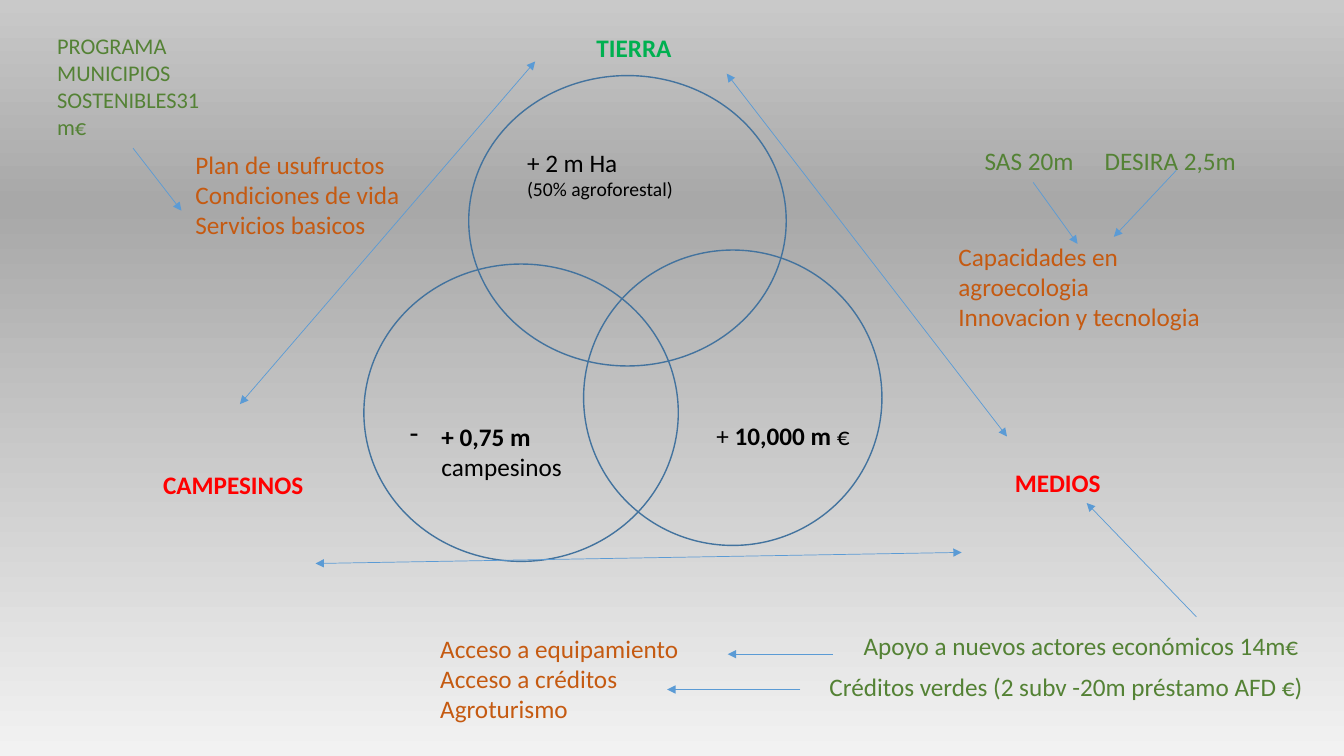
from copy import deepcopy

from pptx import Presentation
from pptx.dml.color import RGBColor
from pptx.enum.shapes import MSO_CONNECTOR as LINE, MSO_SHAPE as SHAPE
from pptx.enum.text import MSO_AUTO_SIZE as FIT
from pptx.oxml.ns import qn
from pptx.util import Pt

BLACK, GREEN, RED = "000000", "00B050", "FF0000"
ORANGE, OLIVE, BLUE, NAVY = "C55A11", "548235", "5B9BD5", "43739E"


def color(code):
    return RGBColor.from_string(code)


def add_text(left, top, width, height, code, lines, bold=None, wrap=True):
    """Add a text box; each line is a paragraph given as (text, bold) spans."""
    box = page.shapes.add_textbox(Pt(left), Pt(top), Pt(width), Pt(height))
    frame = box.text_frame
    frame.word_wrap = wrap
    frame.auto_size = FIT.SHAPE_TO_FIT_TEXT
    for index, spans in enumerate(lines):
        para = frame.add_paragraph() if index else frame.paragraphs[0]
        para.font.name, para.font.size = "Calibri", Pt(18)
        para.font.bold = bold
        para.font.color.rgb = color(code)
        if isinstance(spans, str):
            spans = [(spans, None)]
        for text, span_bold in spans:
            span = para.add_run()
            span.text = text
            span.font.bold = span_bold
    return frame.paragraphs


deck = Presentation()
deck.slide_width, deck.slide_height = Pt(960), Pt(540)
page = deck.slides.add_slide(deck.slide_layouts[6])

# Background: three-stop gradient running upwards
fill = page.background.fill
fill.gradient()
fill.gradient_angle = 90
stop_list = page._element.find(".//" + qn("a:gsLst"))
stop_list.append(deepcopy(stop_list[-1]))
stops = [(0, "F2F2F2"), (0.73, "A8A8A8"), (1, "C9C9C9")]
for stop, (position, code) in zip(fill.gradient_stops, stops):
    stop.position = position
    stop.color.rgb = color(code)

# Three overlapping circles
for left, top, width, height in [
    (334.8, 54, 226.8, 207.4),
    (416.9, 178.6, 213.1, 211),
    (259.9, 188.6, 224.6, 212.4),
]:
    circle = page.shapes.add_shape(
        SHAPE.OVAL, Pt(left), Pt(top), Pt(width), Pt(height))
    circle.shadow.inherit = False
    circle.fill.background()
    circle.line.color.rgb = color(NAVY)
    circle.line.width = Pt(1)

# Corner headings
for left, top, code, heading in [
    (419, 19.4, GREEN, "TIERRA"),
    (109.4, 331.9, RED, "CAMPESINOS"),
    (717.8, 330.5, RED, "MEDIOS"),
]:
    add_text(left, top, 116, 29, code, [heading], bold=True)

# Figures inside the circles
land = add_text(369.4, 101.5, 165.6, 46, BLACK,
                ["+ 2 m Ha", "(50% agroforestal)"])
land[1].font.size = Pt(14)
add_text(504.7, 296.6, 116, 29, BLACK,
         [[("+ ", None), ("10,000 m ", True), ("€", None)]])
farmers = add_text(285.8, 297.4, 129.6, 72.7, BLACK,
                   [[("+ 0,75 m ", True), ("campesinos", None)]])
props = farmers[0]._p.get_or_add_pPr()
props.set("marL", str(Pt(22.5)))
props.set("indent", str(Pt(-22.5)))
bullet = props.makeelement(qn("a:buChar"), {"char": "-"})
props.insert_element_before(bullet, "a:tabLst", "a:defRPr", "a:extLst")

# Needs, in orange
for left, top, width, height, lines in [
    (132.5, 103, 168.5, 97.2,
     ["Plan de usufructos", "Condiciones de vida", "Servicios basicos"]),
    (307.4, 448.6, 218.2, 72.7,
     ["Acceso a equipamiento", "Acceso a créditos", "Agroturismo"]),
    (677.5, 168.5, 218.2, 72.7,
     ["Capacidades en agroecologia", "Innovacion y tecnologia"]),
]:
    add_text(left, top, width, height, ORANGE, lines)

# Programmes and funds, in olive
program = add_text(33.8, 19.4, 116, 85, OLIVE,
                   ["PROGRAMA MUNICIPIOS SOSTENIBLES31m€"])
program[0].font.size = Pt(16)
add_text(696.2, 100.1, 78.5, 29, OLIVE, ["SAS 20m"], wrap=False)
for left, top, width, text in [
    (781.9, 100.1, 116, "DESIRA 2,5m"),
    (609.8, 446.4, 350, "Apoyo a nuevos actores económicos 14m€"),
    (585.4, 475.9, 364.3, "Créditos verdes (2 subv -20m préstamo AFD €)"),
]:
    add_text(left, top, width, 29, OLIVE, [text])

# Arrows: two-headed between the corners, one-headed from the funds
both_ends, one_end = ["a:headEnd", "a:tailEnd"], ["a:tailEnd"]
for x1, y1, x2, y2, ends in [
    (382.3, 43.9, 171.4, 288.7, both_ends),
    (519.1, 52.6, 719.3, 311.8, both_ends),
    (686.9, 394.6, 225.4, 402.5, both_ends),
    (95, 105.8, 129.6, 150.5, one_end),
    (840.2, 121.7, 795.6, 169.2, one_end),
    (594.7, 467.3, 519.8, 467.3, one_end),
    (571.7, 492.5, 476.6, 492.5, one_end),
    (854.6, 440.6, 776.2, 359.3, one_end),
    (738, 130.3, 769.7, 174.2, one_end),
]:
    arrow = page.shapes.add_connector(
        LINE.STRAIGHT, Pt(x1), Pt(y1), Pt(x2), Pt(y2))
    arrow.line.color.rgb = color(BLUE)
    arrow.line.width = Pt(0.5)
    line = arrow.line._get_or_add_ln()
    for end in ends:
        line.append(line.makeelement(qn(end), {"type": "triangle"}))
    shape_props = arrow._element.spPr
    shape_props.append(shape_props.makeelement(qn("a:effectLst"), {}))

deck.save("out.pptx")
